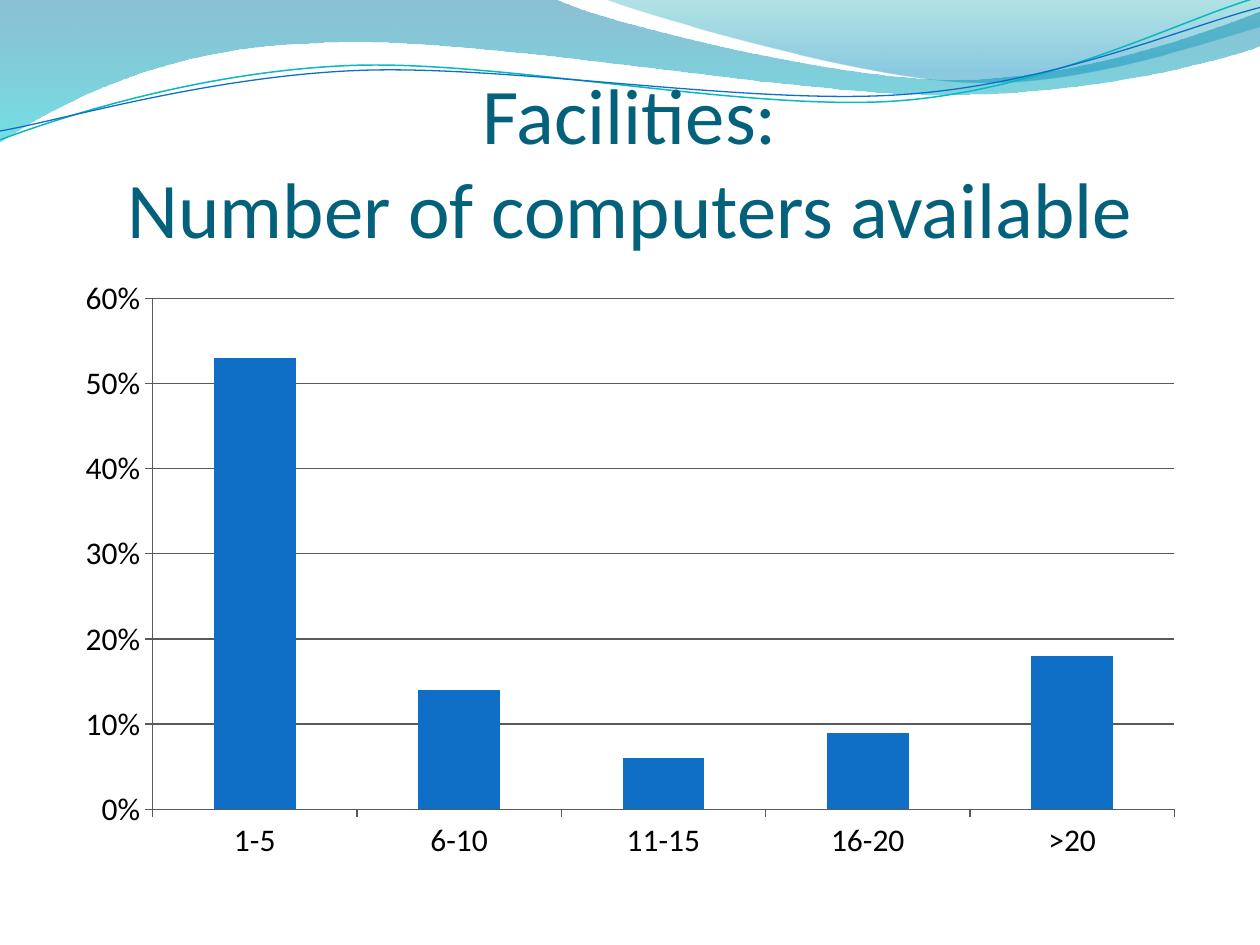
from dataclasses import dataclass
from math import cos, radians, sin

from lxml import etree
from pptx import Presentation
from pptx.chart.data import CategoryChartData
from pptx.dml.color import RGBColor
from pptx.enum.chart import XL_CHART_TYPE, XL_TICK_MARK
from pptx.enum.text import MSO_ANCHOR, MSO_AUTO_SIZE, PP_ALIGN
from pptx.oxml.ns import qn
from pptx.util import Inches, Pt

COLUMNS = XL_CHART_TYPE.COLUMN_CLUSTERED
TICK_OUTSIDE, TICK_NONE = XL_TICK_MARK.OUTSIDE, XL_TICK_MARK.NONE
BOTTOM, CENTER, NO_FIT = MSO_ANCHOR.BOTTOM, PP_ALIGN.CENTER, MSO_AUTO_SIZE.NONE


@dataclass(frozen=True)
class Theme:
    font: str = "Calibri"
    title_size: int = 45
    axis_size: int = 18
    title: str = "04617B"
    bar: str = "0F6FC6"
    teal_line: str = "0AB8BF"
    axis_line: str = "595959"
    text: str = "000000"


theme = Theme()
TILT = 2.7


def draw_outline(page, segments, closed):
    """Draw a freeform; a segment of one point is straight, one of three is a Bezier curve."""
    points = [(Inches(x), Inches(y)) for segment in segments for x, y in segment]
    builder = page.shapes.build_freeform(*points[0])
    builder.add_line_segments(points[1:], close=closed)
    shape = builder.convert_to_shape()
    shape.shadow.inherit = False
    steps = iter(list(shape._element.iter(qn("a:lnTo"))))
    for segment in segments[1:]:
        first, *others = [next(steps) for _ in segment]
        if others:
            curve = etree.Element(qn("a:cubicBezTo"))
            first.addprevious(curve)
            for step in (first, *others):
                curve.append(step[0])
                step.getparent().remove(step)
    return shape


def tilt(point, center):
    """Turn a point clockwise about a center by the tilt of the wave lines."""
    x, y = point[0] - center[0], point[1] - center[1]
    turn = radians(TILT)
    return (center[0] + x * cos(turn) - y * sin(turn),
            center[1] + x * sin(turn) + y * cos(turn))


deck = Presentation()
deck.slide_width, deck.slide_height = Inches(10), Inches(7.5)
page = deck.slides.add_slide(deck.slide_layouts[5])

# Wave bands: outline, then gradient stops as position, colour, opacity in percent
wide_band = [
    [(0, 0)],
    [(4.4, -0.01)],
    [(4.76, 0.17), (6.64, 0.63), (7.58, 0.63)],
    [(8.53, 0.63), (9.58, 0.26), (10, 0.09)],
    [(10.01, 0.36)],
    [(9.83, 0.44), (8.7, 0.76), (7.46, 0.75)],
    [(6.22, 0.75), (3.82, 0.28), (2.57, 0.34)],
    [(1.29, 0.36), (0.46, 0.83), (-0.01, 1.13)],
]
right_band = [
    [(4.79, -0.01)],
    [(5.09, 0.11), (6.82, 0.62), (7.69, 0.65)],
    [(8.56, 0.69), (9.61, 0.32), (10, 0.21)],
    [(10, 0)],
]
bands = [
    (wide_band, [(0, "0074A1", 45), (1, "00C6CF", 55)]),
    (right_band, [(0, "00A1A9", 30), (0.8, "008BBF", 45)]),
]
for segments, stops in bands:
    band = draw_outline(page, segments, True)
    band.line.fill.background()
    band.fill.gradient()
    band.fill.gradient_angle = 270
    for stop, (position, color, _) in zip(band.fill.gradient_stops, stops):
        stop.position = position
        stop.color.rgb = RGBColor.from_string(color)
    for color_node, (_, _, opacity) in zip(band._element.iter(qn("a:srgbClr")), stops):
        etree.SubElement(color_node, qn("a:alpha"), val=str(opacity * 1000))

# Wave lines: center, outline, colour, width
teal_wave = [
    [(0, 1.11)],
    [(0.48, 0.93), (1.58, 0.57), (2.77, 0.52)],
    [(3.95, 0.47), (5.93, 0.89), (7.13, 0.8)],
    [(8.33, 0.71), (9.38, 0.15), (9.98, -0.02)],
]
blue_wave = [
    [(0, 1.04)],
    [(0.47, 0.96), (1.64, 0.61), (2.83, 0.56)],
    [(4.03, 0.51), (5.97, 0.84), (7.17, 0.75)],
    [(8.36, 0.67), (9.41, 0.21), (10, 0.06)],
]
wave_lines = [
    ((4.99, 0.58), teal_wave, theme.teal_line, 0.85),
    ((5, 0.59), blue_wave, theme.bar, 0.75),
]
for center, segments, color, width in wave_lines:
    level = [[tilt(point, center) for point in segment] for segment in segments]
    wave = draw_outline(page, level, False)
    wave.rotation = 360 - TILT
    wave.fill.background()
    wave.line.color.rgb = RGBColor.from_string(color)
    wave.line.width = Pt(width)

# Title, in front of the waves
title = page.shapes.title
page.shapes._spTree.append(title._element)
title.left, title.top, title.width, title.height = map(Inches, (0.5, 0.77, 9, 1.25))
frame = title.text_frame
frame.text = "Facilities:\vNumber of computers available"
frame.word_wrap = True
frame.auto_size = NO_FIT
frame.vertical_anchor = BOTTOM
frame.margin_left = frame.margin_right = frame.margin_bottom = 0
frame.margin_top = Inches(0.05)
para = frame.paragraphs[0]
para.alignment = CENTER
for span in para.runs:
    span.font.name = theme.font
    span.font.size = Pt(theme.title_size)
    span.font.color.rgb = RGBColor.from_string(theme.title)

# Column chart
data = CategoryChartData(number_format="0%")
data.categories = ["1-5", "6-10", "11-15", "16-20", ">20"]
data.add_series("Series 1", [0.53, 0.14, 0.06, 0.09, 0.18])
chart = page.shapes.add_chart(
    COLUMNS, Inches(0.5), Inches(2.12), Inches(9), Inches(4.8), data
).chart
chart.has_legend = False
chart.has_title = False
chart.font.name = theme.font
chart.font.size = Pt(theme.axis_size)
chart.font.color.rgb = RGBColor.from_string(theme.text)

plot = chart.plots[0]
plot.gap_width = 150
plot.vary_by_categories = False
bars = plot.series[0]
bars.invert_if_negative = False
bars.format.fill.solid()
bars.format.fill.fore_color.rgb = RGBColor.from_string(theme.bar)

values = chart.value_axis
values.minimum_scale, values.maximum_scale, values.major_unit = 0, 0.6, 0.1
values.has_major_gridlines = True
values.tick_labels.number_format = "0%"
values.tick_labels.number_format_is_linked = False
for axis in (chart.category_axis, values):
    axis.major_tick_mark = TICK_OUTSIDE
    axis.minor_tick_mark = TICK_NONE
for line in (chart.category_axis.format.line, values.format.line,
             values.major_gridlines.format.line):
    line.color.rgb = RGBColor.from_string(theme.axis_line)
    line.width = Pt(0.75)

deck.save("out.pptx")
